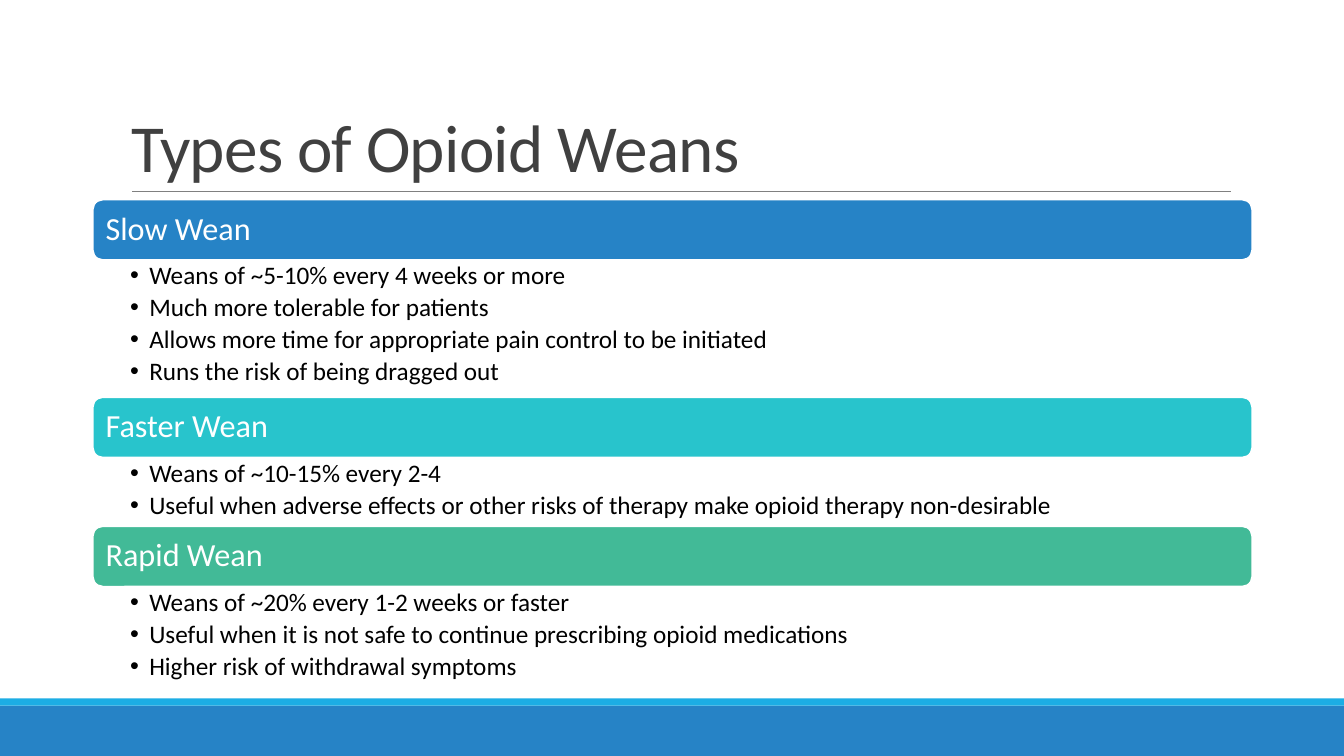
from lxml.etree import SubElement
from pptx import Presentation
from pptx.dml.color import RGBColor
from pptx.enum.shapes import MSO_CONNECTOR as Connector, MSO_SHAPE as Preset
from pptx.enum.text import MSO_ANCHOR as Anchor, MSO_AUTO_SIZE as AutoSize, PP_ALIGN as Align
from pptx.oxml.ns import qn
from pptx.util import Inches, Pt

COLOURS = {
    "blue": "2683C6", "sky": "1CADE4", "turquoise": "28C4CC", "green": "42BA97",
    "title": "404040", "rule": "808080", "text": "000000", "white": "FFFFFF",
}
WIDTH, HEIGHT = 13.33, 7.5

# Grid of the wean sections: a bar, then one row for each bullet
LEFT, TOP, SECTION_WIDTH = 0.92, 1.98, 11.5
BAR_HEIGHT, BULLET_ROW = 0.6, 0.34
BULLET_INDENT = 0.19

SECTIONS = [
    ("Slow Wean", "blue", [
        "Weans of ~5-10% every 4 weeks or more",
        "Much more tolerable for patients",
        "Allows more time for appropriate pain control to be initiated",
        "Runs the risk of being dragged out",
    ]),
    ("Faster Wean", "turquoise", [
        "Weans of ~10-15% every 2-4",
        "Useful when adverse effects or other risks of therapy make opioid therapy non-desirable",
    ]),
    ("Rapid Wean", "green", [
        "Weans of ~20% every 1-2 weeks or faster",
        "Useful when it is not safe to continue prescribing opioid medications",
        "Higher risk of withdrawal symptoms",
    ]),
]


def colour(name):
    return RGBColor.from_string(COLOURS[name])


def apply_format(target, values):
    for name, value in values.items():
        setattr(target, name, value)


def place(shape, left, top, width, height):
    apply_format(shape, {"left": Inches(left), "top": Inches(top),
                         "width": Inches(width), "height": Inches(height)})


def format_frame(frame, anchor, insets):
    sides = ("margin_left", "margin_top", "margin_right", "margin_bottom")
    apply_format(frame, {"word_wrap": True, "auto_size": AutoSize.NONE,
                         "vertical_anchor": anchor})
    apply_format(frame, {side: Inches(inset) for side, inset in zip(sides, insets)})


def write(paragraph, text, size, colour_name, line_spacing=0.9, space_after=0):
    run = paragraph.add_run()
    run.text = text
    apply_format(run.font, {"name": "Calibri", "size": Pt(size), "bold": False})
    run.font.color.rgb = colour(colour_name)
    apply_format(paragraph, {"alignment": Align.LEFT, "line_spacing": line_spacing,
                             "space_before": Pt(0), "space_after": Pt(space_after)})
    return run


def add_block(slide, preset, colour_name, left, top, width, height):
    shape = slide.shapes.add_shape(preset, Inches(left), Inches(top),
                                   Inches(width), Inches(height))
    shape.shadow.inherit = False
    shape.fill.solid()
    shape.fill.fore_color.rgb = colour(colour_name)
    shape.line.fill.background()
    return shape


def add_footer(slide):
    band_top, stripe = HEIGHT - 0.5, 0.07
    add_block(slide, Preset.RECTANGLE, "blue", 0, band_top, WIDTH, HEIGHT - band_top)
    add_block(slide, Preset.RECTANGLE, "sky", 0, band_top - stripe, WIDTH, stripe)


def add_title(slide, text):
    title = slide.shapes.title
    place(title, 1.2, 0.31, 11, 1.59)
    format_frame(title.text_frame, Anchor.BOTTOM, (0.1, 0.05, 0.1, 0.05))
    run = write(title.text_frame.paragraphs[0], text, 48, "title", line_spacing=0.85)
    run.font._element.set("spc", "-50")

    # Rule below the title
    rule = slide.shapes.add_connector(Connector.STRAIGHT, Inches(1.31), Inches(1.9),
                                      Inches(12.21), Inches(1.9))
    rule.line.color.rgb = colour("rule")
    rule.line.width = Pt(0.5)
    SubElement(rule._element.spPr, qn("a:effectLst"))


def add_bar(slide, text, colour_name, top):
    bar = add_block(slide, Preset.ROUNDED_RECTANGLE, colour_name,
                    LEFT, top, SECTION_WIDTH, BAR_HEIGHT)
    bar.line.color.rgb = colour("white")
    bar.line.width = Pt(1.25)
    format_frame(bar.text_frame, Anchor.MIDDLE, (0.1, 0.1, 0.1, 0.1))
    write(bar.text_frame.paragraphs[0], text, 23, "white")


def fill_list(placeholder, items, top):
    place(placeholder, LEFT, top, SECTION_WIDTH, BULLET_ROW * len(items))
    frame = placeholder.text_frame
    format_frame(frame, Anchor.TOP, (0.37, 0.03, 0.18, 0.03))
    for index, item in enumerate(items):
        paragraph = frame.add_paragraph() if index else frame.paragraphs[0]
        write(paragraph, item, 18, "text", space_after=3.3)
        properties = paragraph._p.get_or_add_pPr()
        properties.set("marL", str(Inches(BULLET_INDENT)))
        properties.set("indent", str(-Inches(BULLET_INDENT)))
        SubElement(properties, qn("a:buFont"), typeface="Arial")
        SubElement(properties, qn("a:buChar"), char="•")


def main():
    presentation = Presentation()
    presentation.slide_width = Inches(WIDTH)
    presentation.slide_height = Inches(HEIGHT)
    # The comparison layout has a title and four body placeholders
    slide = presentation.slides.add_slide(presentation.slide_layouts[4])
    bodies = list(slide.placeholders)[1:]

    add_footer(slide)
    add_title(slide, "Types of Opioid Weans")

    # Sections stacked from top to bottom
    top = TOP
    for body, (heading, colour_name, items) in zip(bodies, SECTIONS):
        add_bar(slide, heading, colour_name, top)
        fill_list(body, items, top + BAR_HEIGHT)
        top += BAR_HEIGHT + BULLET_ROW * len(items)

    # Unused placeholders
    for body in bodies[len(SECTIONS):]:
        body._element.getparent().remove(body._element)

    presentation.save("out.pptx")


if __name__ == "__main__":
    main()
